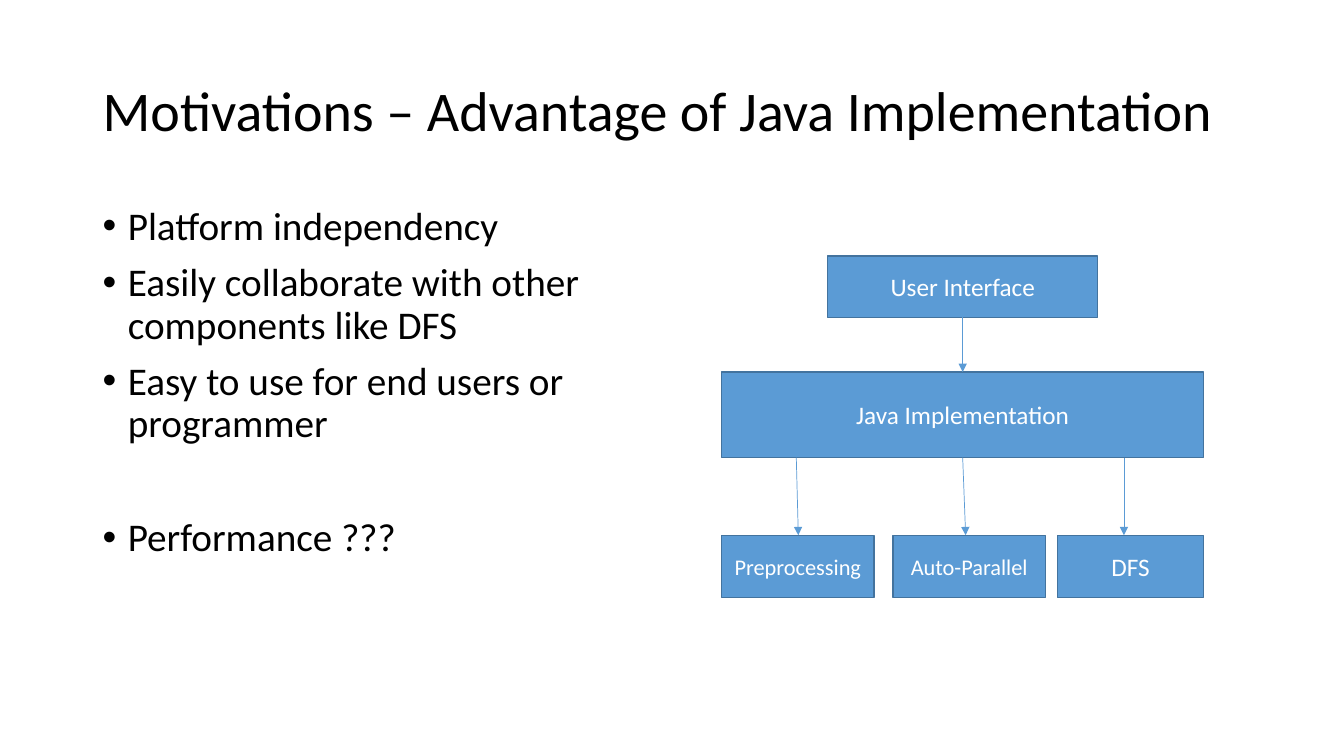
"""Build the slide on the advantages of a Java implementation."""
from lxml.etree import SubElement
from pptx import Presentation
from pptx.dml.color import RGBColor
from pptx.enum.shapes import MSO_CONNECTOR, MSO_SHAPE
from pptx.enum.text import MSO_ANCHOR, PP_ALIGN
from pptx.oxml.ns import qn
from pptx.util import Inches, Pt

TITLE = "Motivations – Advantage of Java Implementation"
POINTS = [
    ("Platform independency", 10),
    ("Easily collaborate with other components like DFS", 10),
    ("Easy to use for end users or programmer", 10),
    ("Performance ???", 51),
]
HEAD = (6.9, 5.33, 86.25, 19.33)
BODY = (6.9, 26.67, 42.5, 63.47)
ROWS = {"top": (33.87, 8.1), "mid": (49.2, 11.33), "low": (70.8, 8.27)}
BOXES = [
    ("User Interface", "top", 61.58, 20.1, 18),
    ("Java Implementation", "mid", 53.7, 35.85, 18),
    ("Preprocessing", "low", 53.7, 11.33, 16),
    ("Auto-Parallel", "low", 66.45, 11.33, 16),
    ("DFS", "low", 78.68, 10.87, 18),
]
ARROWS = [
    ("top", "mid", 71.63, 71.63),
    ("mid", "low", 59.25, 59.4),
    ("mid", "low", 71.63, 71.85),
    ("mid", "low", 83.63, 83.63),
]
HUES = {"text": "000000", "fill": "5B9BD5", "edge": "43739E", "label": "FFFFFF"}
BULLET = {"marL": str(Inches(0.25)), "indent": str(-Inches(0.25))}

deck = Presentation()
deck.slide_width, deck.slide_height = Inches(13.33), Inches(7.5)
slide = deck.slides.add_slide(deck.slide_layouts[6])
shapes = slide.shapes


def place(*spots):
    """Turn percent shares, across then down in turn, into lengths."""
    sides = (deck.slide_width, deck.slide_height)
    return [int(sides[n % 2] * spot / 100) for n, spot in enumerate(spots)]


def apply(item, form):
    """Set each format value on an item."""
    for name, value in form.items():
        setattr(item, name, value)


def hue(name):
    """Look up a colour."""
    return RGBColor.from_string(HUES[name])


def write(para, text, size, tint, **form):
    """Fill a paragraph with one styled run."""
    run = para.add_run()
    run.text = text
    apply(run.font, {"name": "Calibri", "size": Pt(size)})
    run.font.color.rgb = hue(tint)
    apply(para, form)


def frame(spot, anchor):
    """Add a wrapping text box."""
    text = shapes.add_textbox(*place(*spot)).text_frame
    apply(text, {"word_wrap": True, "vertical_anchor": anchor})
    return text


def draw_box(label, row, left, width, size):
    """Add one labelled block."""
    top, height = ROWS[row]
    box = shapes.add_shape(MSO_SHAPE.RECTANGLE, *place(left, top, width, height))
    box.shadow.inherit = False
    box.fill.solid()
    box.fill.fore_color.rgb = hue("fill")
    box.line.color.rgb = hue("edge")
    box.line.width = Pt(1)
    apply(box.text_frame, {"word_wrap": True, "vertical_anchor": MSO_ANCHOR.MIDDLE})
    write(box.text_frame.paragraphs[0], label, size, "label", alignment=PP_ALIGN.CENTER)


def draw_arrow(start, end, left, right):
    """Link the foot of one row to the head of another."""
    ends = place(left, sum(ROWS[start]), right, ROWS[end][0])
    link = shapes.add_connector(MSO_CONNECTOR.STRAIGHT, *ends)
    link.line.color.rgb = hue("fill")
    link.line.width = Pt(0.5)
    SubElement(link.line._get_or_add_ln(), qn("a:tailEnd"), type="triangle")
    SubElement(link._element.spPr, qn("a:effectLst"))


def main():
    """Draw all parts and save."""
    head = frame(HEAD, MSO_ANCHOR.MIDDLE)
    write(head.paragraphs[0], TITLE, 40, "text", line_spacing=0.9)
    body = frame(BODY, MSO_ANCHOR.TOP)
    for n, (text, gap) in enumerate(POINTS):
        para = body.add_paragraph() if n else body.paragraphs[0]
        write(para, text, 28, "text", line_spacing=0.9, space_before=Pt(gap))
        props = para._p.get_or_add_pPr()
        for key, value in BULLET.items():
            props.set(key, value)
        SubElement(props, qn("a:buFont"), typeface="Arial")
        SubElement(props, qn("a:buChar"), char="•")
    for box in BOXES:
        draw_box(*box)
    for arrow in ARROWS:
        draw_arrow(*arrow)
    deck.save("out.pptx")


if __name__ == "__main__":
    main()
